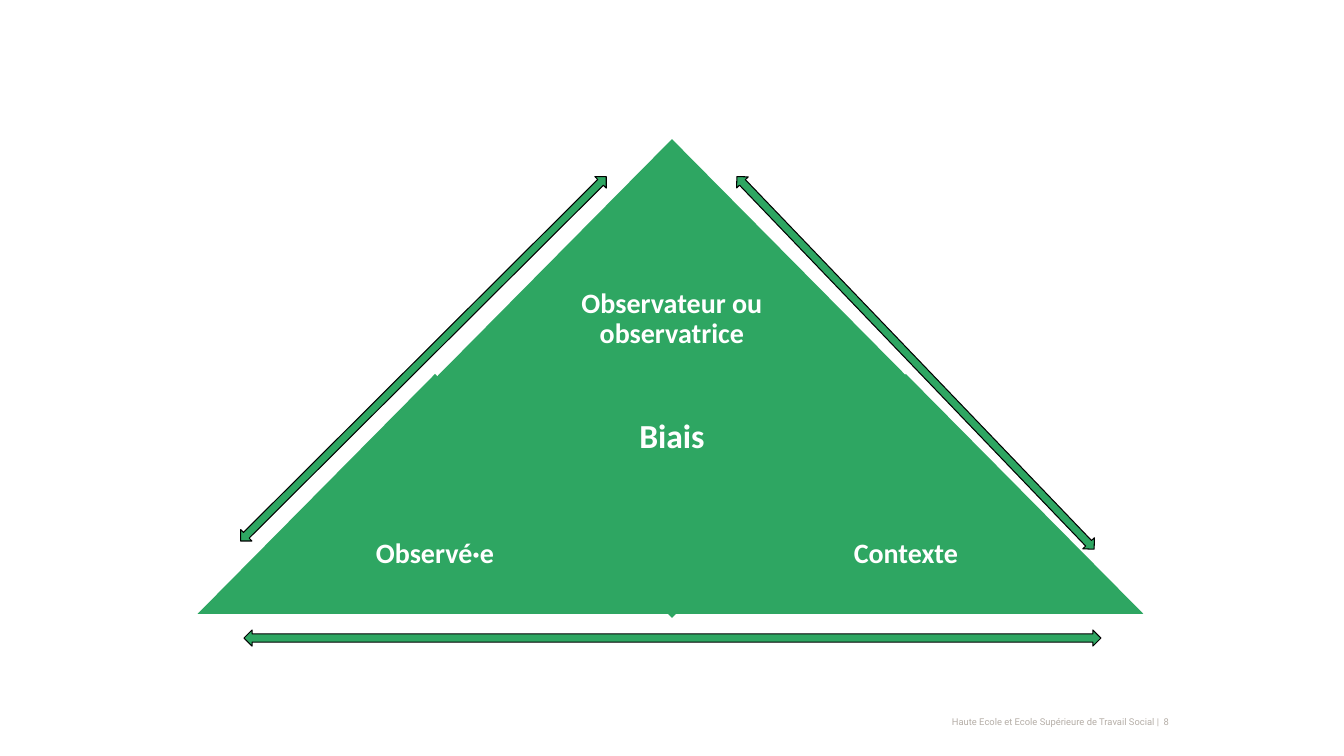
from pptx import Presentation
from pptx.dml.color import RGBColor
from pptx.enum.shapes import MSO_SHAPE as SHAPE
from pptx.enum.text import MSO_ANCHOR as ANCHOR, PP_ALIGN as ALIGN
from pptx.util import Inches, Pt

GREEN = RGBColor(0x2E, 0xA6, 0x62)
WHITE = RGBColor(0xFF, 0xFF, 0xFF)
BLACK = RGBColor(0x00, 0x00, 0x00)
GREY = RGBColor(0xB5, 0xAE, 0xA7)

TRI_W, TRI_H = 4.71, 2.38
ARROW_H = 0.16

# left, top, rotation, label, text size, label inset
TRIANGLES = [
    (4.31, 1.38, 0, "Observateur ou observatrice", 20, 0.08),
    (1.96, 3.71, 0, "Observé·e", 20, 0.08),
    (4.31, 3.75, 180, "Biais", 24, 0.1),
    (6.63, 3.71, 0, "Contexte", 20, 0.08),
]
# left, top, length, rotation
ARROWS = [
    (1.64, 3.48, 5.12, 315.1),
    (6.52, 3.52, 5.12, 46.2),
    (2.42, 6.25, 8.5, 0),
]


def add_green_shape(slide, kind, left, top, width, height, rotation):
    s = slide.shapes.add_shape(kind, Inches(left), Inches(top), Inches(width), Inches(height))
    s.rotation = rotation
    s.shadow.inherit = False
    s.fill.solid()
    s.fill.fore_color.rgb = GREEN
    return s


def add_text(slide, box, text, font, size, color, align, inset_x, inset_y):
    """Add a one-paragraph text box, centred vertically, and return its paragraph."""
    tf = slide.shapes.add_textbox(*map(Inches, box)).text_frame
    tf.word_wrap = True
    tf.vertical_anchor = ANCHOR.MIDDLE
    tf.margin_left = tf.margin_right = Inches(inset_x)
    tf.margin_top = tf.margin_bottom = Inches(inset_y)
    tf.text = text
    p = tf.paragraphs[0]
    p.alignment = align
    r = p.runs[0]
    r.font.name, r.font.size, r.font.color.rgb = font, Pt(size), color
    return p


def add_triangle(slide, left, top, rotation, label, size, inset):
    """Add a triangle with its label in the half nearest the base."""
    s = add_green_shape(slide, SHAPE.ISOSCELES_TRIANGLE, left, top, TRI_W, TRI_H, rotation)
    s.line.fill.background()
    label_top = top if rotation else top + TRI_H / 2
    box = (left + TRI_W / 4, label_top, TRI_W / 2, TRI_H / 2)
    p = add_text(slide, box, label, "Calibri", size, WHITE, ALIGN.CENTER, inset, inset)
    p.line_spacing = 0.9
    p.runs[0].font.bold = True


def add_arrow(slide, left, top, length, rotation):
    s = add_green_shape(slide, SHAPE.LEFT_RIGHT_ARROW, left, top, length, ARROW_H, rotation)
    s.line.color.rgb = BLACK
    s.line.width = Pt(0.75)


def add_footer(slide, box):
    p = add_text(slide, box, "Haute Ecole et Ecole Supérieure de Travail Social |  8",
                 "Roboto", 6.7, GREY, ALIGN.RIGHT, 0.13, 0.07)
    p.line_spacing = Pt(7)


def main():
    prs = Presentation()
    prs.slide_width, prs.slide_height = Inches(13.33), Inches(7.5)
    slide = prs.slides.add_slide(prs.slide_layouts[6])
    add_footer(slide, (8.44, 7.1, 3.29, 0.14))
    for triangle in TRIANGLES:
        add_triangle(slide, *triangle)
    for arrow in ARROWS:
        add_arrow(slide, *arrow)
    prs.save("out.pptx")


if __name__ == "__main__":
    main()
